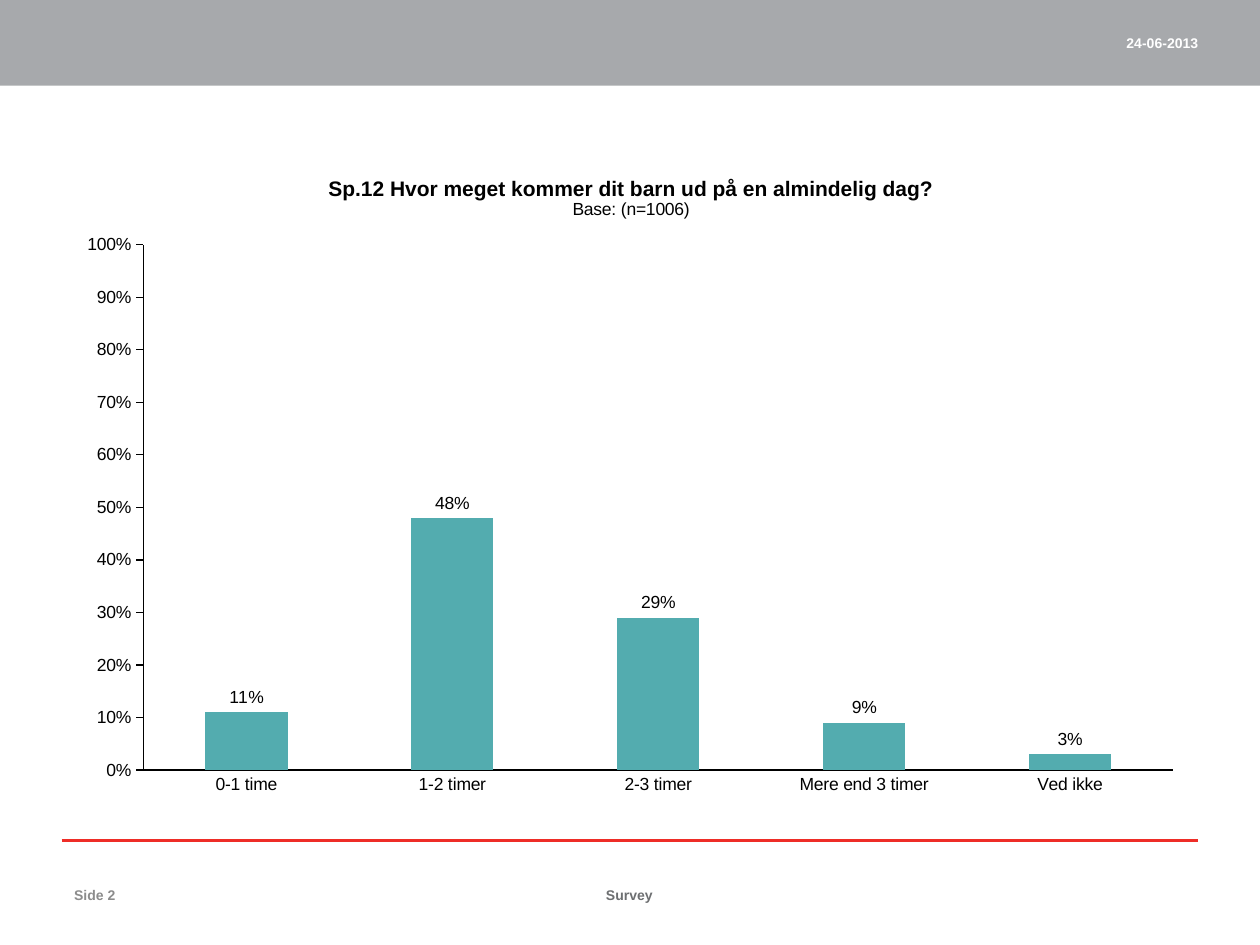
from lxml import etree
from pptx import Presentation
from pptx.chart.data import CategoryChartData
from pptx.dml.color import RGBColor
from pptx.enum import chart as c, shapes, text
from pptx.oxml import parse_xml
from pptx.oxml.ns import nsdecls, qn
from pptx.util import Inches, Pt

COLORS = {"band": "A7A9AC", "rule": "EE2D27", "date": "FFFFFF", "footer": "6D6F71",
          "page": "8C8C8C", "bar": "53ACAF", "ink": "000000"}


def style_font(font, size, color, bold=False):
    font.name = "Arial"
    font.size = Pt(size)
    font.bold = bold
    font.color.rgb = RGBColor.from_string(COLORS[color])


def manual_layout(**values):
    items = "".join(f'<c:{name} val="{value}"/>' for name, value in values.items())
    return parse_xml(f'<c:layout {nsdecls("c")}><c:manualLayout>{items}</c:manualLayout></c:layout>')


presentation = Presentation()
presentation.slide_width = Inches(10)
presentation.slide_height = Inches(7.5)
slide = presentation.slides.add_slide(presentation.slide_layouts[6])

band = slide.shapes.add_shape(shapes.MSO_SHAPE.RECTANGLE, 0, 0, Inches(10), Inches(0.68))
band.shadow.inherit = False
band.fill.solid()
band.fill.fore_color.rgb = RGBColor.from_string(COLORS["band"])
band.line.fill.background()

rule = slide.shapes.add_connector(shapes.MSO_CONNECTOR.STRAIGHT, Inches(0.49), Inches(6.67),
                                  Inches(9.51), Inches(6.67))
rule.line.color.rgb = RGBColor.from_string(COLORS["rule"])
rule.line.width = Pt(1.5)
etree.SubElement(rule.element.spPr, qn("a:effectLst"))

for words, left, top, width, align, color in [
    ("24-06-2013", 7.28, 0.14, 2.33, text.PP_ALIGN.RIGHT, "date"),
    ("Survey", 3.89, 6.9, 2.21, text.PP_ALIGN.CENTER, "footer"),
    ("Side 2", 0.49, 6.9, 2.33, text.PP_ALIGN.LEFT, "page"),
]:
    box = slide.shapes.add_textbox(Inches(left), Inches(top), Inches(width), Inches(0.4))
    box.text_frame.word_wrap = True
    box.text_frame.vertical_anchor = text.MSO_ANCHOR.MIDDLE
    paragraph = box.text_frame.paragraphs[0]
    paragraph.alignment = align
    run = paragraph.add_run()
    run.text = words
    style_font(run.font, 8, color, True)

data = CategoryChartData(number_format="0%")
data.categories = ["0-1 time", "1-2 timer", "2-3 timer", "Mere end 3 timer", "Ved ikke"]
data.add_series("Series 1", [0.11, 0.48, 0.29, 0.09, 0.03])
chart = slide.shapes.add_chart(c.XL_CHART_TYPE.COLUMN_CLUSTERED, Inches(0.51), Inches(1.15),
                               Inches(8.98), Inches(5.28), data).chart
style_font(chart.font, 10, "ink")
chart.has_legend = False

title_frame = chart.chart_title.text_frame
for index, (words, size, bold) in enumerate([
    ("Sp.12 Hvor meget kommer dit barn ud på en almindelig dag?", 12, True),
    ("Base: (n=1006)", 10, False),
]):
    paragraph = title_frame.add_paragraph() if index else title_frame.paragraphs[0]
    run = paragraph.add_run()
    run.text = words
    style_font(run.font, size, "ink", bold)
chart.chart_title.include_in_layout = False
title = chart.chart_title._element
for layout in title.findall(qn("c:layout")):
    title.remove(layout)
title.find(qn("c:tx")).addnext(manual_layout(xMode="edge", yMode="edge", x=0.23, y=0.04))

plot_area = chart.plots[0]._element.getparent()
for layout in plot_area.findall(qn("c:layout")):
    plot_area.remove(layout)
plot_area.insert(0, manual_layout(layoutTarget="inner", xMode="edge", yMode="edge",
                                  x=0.07, y=0.15, w=0.91, h=0.79))

for axis, tick in [(chart.category_axis, c.XL_TICK_MARK.NONE),
                   (chart.value_axis, c.XL_TICK_MARK.OUTSIDE)]:
    axis.has_major_gridlines = False
    axis.major_tick_mark = tick
    axis.minor_tick_mark = c.XL_TICK_MARK.NONE
    axis.format.line.color.rgb = RGBColor.from_string(COLORS["ink"])
    axis.format.line.width = Pt(0.75)
    style_font(axis.tick_labels.font, 10, "ink")
chart.value_axis.minimum_scale = 0
chart.value_axis.maximum_scale = 1
chart.value_axis.major_unit = 0.1
chart.value_axis.tick_labels.number_format = "0%"
chart.value_axis.tick_labels.number_format_is_linked = False

plot = chart.plots[0]
plot.gap_width = 150
plot.overlap = -17
plot.vary_by_categories = False
bars = plot.series[0]
bars.format.fill.solid()
bars.format.fill.fore_color.rgb = RGBColor.from_string(COLORS["bar"])
labels = bars.data_labels
labels.show_value = True
labels.number_format = "0%"
labels.number_format_is_linked = False
labels.position = c.XL_LABEL_POSITION.OUTSIDE_END
style_font(labels.font, 10, "ink")

presentation.save("out.pptx")
